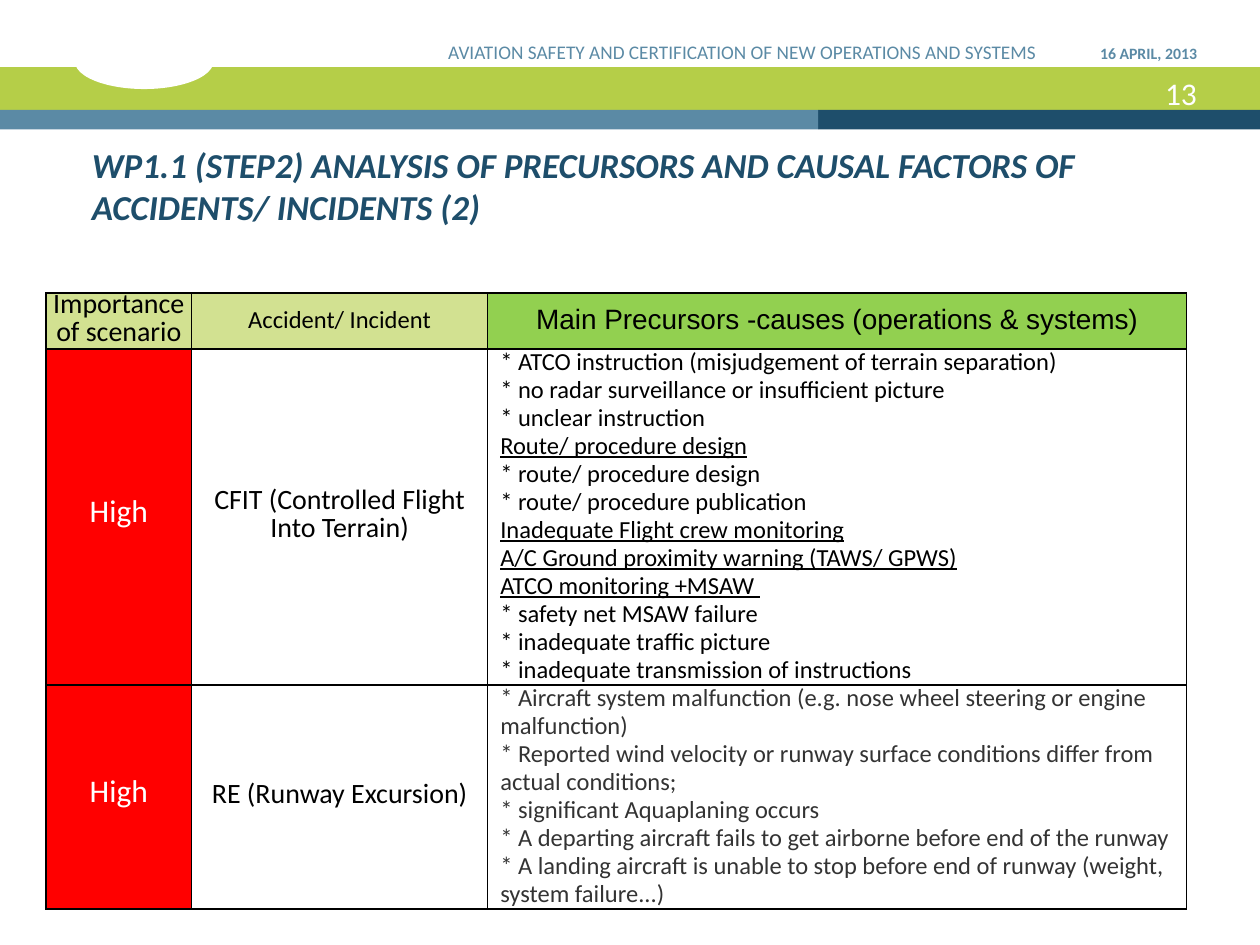
from lxml import etree
from pptx import Presentation
from pptx.dml.color import RGBColor
from pptx.enum import shapes, text
from pptx.oxml import ns
from pptx.util import Pt

BLACK, WHITE, GREY, RED = "000000", "FFFFFF", "333333", "FF0000"
LIME, NAVY, STEEL = "B5CE48", "1E4E6B", "5B8AA5"
PALE_GREEN, GREEN = "D2E191", "92D050"
LEFT, CENTER, RIGHT = text.PP_ALIGN.LEFT, text.PP_ALIGN.CENTER, text.PP_ALIGN.RIGHT


def rgb(value):
    return RGBColor.from_string(value)


def style(paragraph, size, color, font="Calibri", align=LEFT):
    paragraph.alignment = align
    for run in paragraph.runs:
        run.font.size = Pt(size)
        run.font.name = font
        run.font.color.rgb = rgb(color)


prs = Presentation()
prs.slide_width, prs.slide_height = Pt(720), Pt(540)
slide = prs.slides.add_slide(prs.slide_layouts[6])

# Banner
rect, oval = shapes.MSO_SHAPE.RECTANGLE, shapes.MSO_SHAPE.OVAL
for outline, left, top, width, height, color in [
    (rect, 0, 38.4, 720, 24.4, LIME),
    (rect, 467.5, 62.8, 252.5, 11.2, NAVY),
    (rect, 0, 62.8, 467.5, 11.2, STEEL),
    (oval, 42.8, 19.4, 79.2, 31.5, WHITE),
]:
    band = slide.shapes.add_shape(outline, Pt(left), Pt(top), Pt(width), Pt(height))
    band.shadow.inherit = False
    band.fill.solid()
    band.fill.fore_color.rgb = rgb(color)
    band.line.fill.background()

# Page number, date and running header
for words, left, top, width, height, size, color, bold in [
    ("13", 624.2, 38.9, 59.8, 28.8, 18, WHITE, False),
    ("16 APRIL, 2013", 598.3, 3.6, 85.7, 36, 9, STEEL, True),
    ("AVIATION SAFETY AND CERTIFICATION OF NEW OPERATIONS AND SYSTEMS",
     212.4, 3.6, 380, 36, 11, STEEL, False),
]:
    label = slide.shapes.add_textbox(Pt(left), Pt(top), Pt(width), Pt(height)).text_frame
    label.word_wrap = True
    label.vertical_anchor = text.MSO_ANCHOR.BOTTOM
    label.margin_right = 0
    label.text = words
    style(label.paragraphs[0], size, color, align=RIGHT)
    label.paragraphs[0].runs[0].font.bold = bold

title = slide.shapes.add_textbox(Pt(45.4), Pt(78.5), Pt(632), Pt(55.4)).text_frame
title.word_wrap = True
title.text = "WP1.1 (STEP2) ANALYSIS OF PRECURSORS AND CAUSAL FACTORS OF ACCIDENTS/ INCIDENTS (2)"
style(title.paragraphs[0], 20, NAVY)
title_font = title.paragraphs[0].runs[0].font
title_font.bold = title_font.italic = True

# Scenario table
terrain_causes = [
    "* ATCO instruction (misjudgement of terrain separation)",
    "* no radar surveillance or insufficient picture",
    "* unclear instruction",
    "Route/ procedure design",
    "* route/ procedure design",
    "* route/ procedure publication",
    "Inadequate Flight crew monitoring",
    "A/C Ground proximity warning (TAWS/ GPWS)",
    "ATCO monitoring +MSAW ",
    "* safety net MSAW failure",
    "* inadequate traffic picture",
    "* inadequate transmission of instructions",
]
runway_causes = [
    "* Aircraft system malfunction (e.g. nose wheel steering or engine malfunction)",
    "* Reported wind velocity or runway surface conditions differ from actual conditions;",
    "* significant Aquaplaning occurs",
    "* A departing aircraft fails to get airborne before end of the runway",
    "* A landing aircraft is unable to stop before end of runway (weight, system failure...)",
]
# Each cell: lines, size, text colour, font, fill
rows = [
    [(["Importance of scenario"], 16, BLACK, "Calibri", PALE_GREEN),
     (["Accident/ Incident"], 14, BLACK, "Calibri", PALE_GREEN),
     (["Main Precursors -causes (operations & systems)"], 16, BLACK, "Arial", GREEN)],
    [(["High"], 18, WHITE, "Calibri", RED),
     (["CFIT (Controlled Flight Into Terrain)"], 16, BLACK, "Calibri", None),
     (terrain_causes, 14, BLACK, "Calibri", None)],
    [(["High"], 18, WHITE, "Calibri", RED),
     (["RE (Runway Excursion)"], 16, BLACK, "Calibri", None),
     (runway_causes, 14, GREY, "Calibri", None)],
]
LINE_PITCH = 16
col_widths = [83.2, 169.2, 399.4]
row_heights = [lines * LINE_PITCH for lines in (2, 12, 8)]
table = slide.shapes.add_table(3, 3, Pt(26.3), Pt(167.5),
                               Pt(sum(col_widths)), Pt(sum(row_heights))).table
table.first_row = table.horz_banding = False
for column, width in zip(table.columns, col_widths):
    column.width = Pt(width)

for r, row in enumerate(rows):
    table.rows[r].height = Pt(row_heights[r])
    for c, (lines, size, color, font, fill) in enumerate(row):
        cell = table.cell(r, c)
        cell.margin_left = cell.margin_right = Pt(0.7)
        cell.margin_top = cell.margin_bottom = 0
        is_list = len(lines) > 1
        cell.vertical_anchor = text.MSO_ANCHOR.TOP if is_list else text.MSO_ANCHOR.MIDDLE

        cell.text_frame.text = "\n".join(lines)
        for paragraph in cell.text_frame.paragraphs:
            style(paragraph, size, color, font, LEFT if is_list else CENTER)
            paragraph.line_spacing = Pt(LINE_PITCH)
            if is_list:
                paragraph._p.get_or_add_pPr().set("marL", str(Pt(6.5)))
                paragraph.runs[0].font.underline = not paragraph.text.startswith("*")

        properties = cell._tc.get_or_add_tcPr()
        for side in ("lnL", "lnR", "lnT", "lnB"):
            border = etree.SubElement(properties, ns.qn(f"a:{side}"), w=str(Pt(1)))
            ink = etree.SubElement(border, ns.qn("a:solidFill"))
            etree.SubElement(ink, ns.qn("a:srgbClr"), val=BLACK)
        if fill:
            cell.fill.solid()
            cell.fill.fore_color.rgb = rgb(fill)
        else:
            cell.fill.background()

prs.save("out.pptx")
